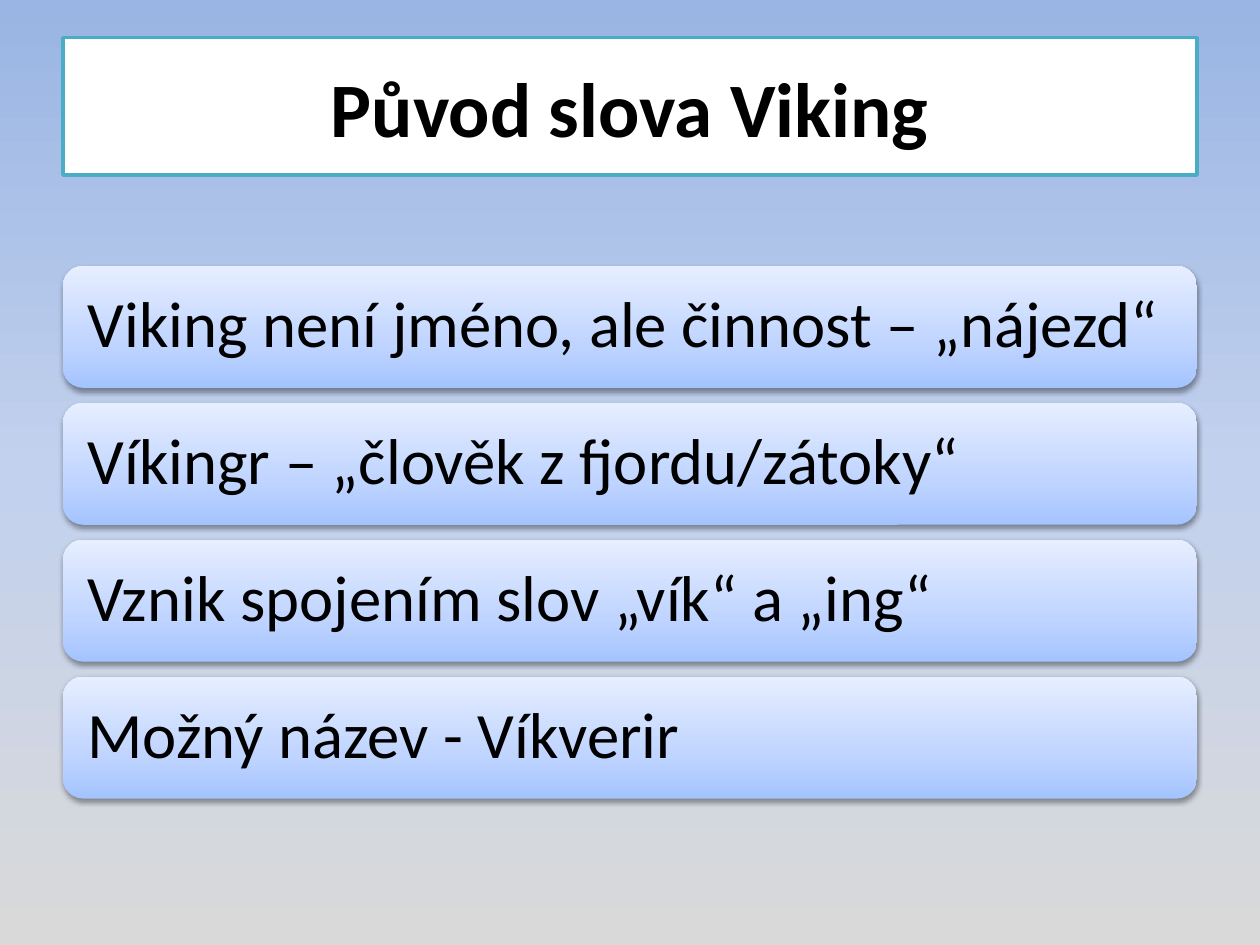
from lxml.etree import SubElement
from pptx import Presentation
from pptx.dml.color import RGBColor
from pptx.enum.shapes import MSO_SHAPE as Shape
from pptx.enum.text import MSO_ANCHOR as Anchor, PP_ALIGN as Align
from pptx.oxml.ns import qn
from pptx.util import Cm, Pt

BLACK = RGBColor(0x00, 0x00, 0x00)
WHITE = RGBColor(0xFF, 0xFF, 0xFF)
TEAL = RGBColor(0x4B, 0xAC, 0xC6)
SKY_STOPS = [
    (0, RGBColor(0x9A, 0xB5, 0xE4)),
    (50, RGBColor(0xC2, 0xD1, 0xED)),
    (100, RGBColor(0xD9, 0xD9, 0xD9)),
]
BAR_STOPS = [
    (0, RGBColor(0xA4, 0xC4, 0xFF)),
    (35, RGBColor(0xBF, 0xD4, 0xFF)),
    (100, RGBColor(0xE6, 0xEE, 0xFF)),
]

TITLE = "Původ slova Viking"
STATEMENTS = [
    "Viking není jméno, ale činnost – „nájezd“",
    "Víkingr – „člověk z fjordu/zátoky“",
    "Vznik spojením slov „vík“ a „ing“",
    "Možný název - Víkverir",
]


def add_color(parent, color, alpha=None):
    srgb = SubElement(parent, qn("a:srgbClr"), val=str(color))
    if alpha is not None:
        SubElement(srgb, qn("a:alpha"), val=str(alpha * 1000))


def fill_gradient(fill, properties, stops, angle):
    """Fill with any number of stops; the angle runs counter-clockwise."""
    fill.gradient()
    fill.gradient_angle = angle
    stop_list = properties.find(qn("a:gradFill")).find(qn("a:gsLst"))
    for old_stop in list(stop_list):
        stop_list.remove(old_stop)
    for position, color in stops:
        stop = SubElement(stop_list, qn("a:gs"), pos=str(position * 1000))
        add_color(stop, color)


def add_soft_shadow(bar):
    bar.shadow.inherit = False
    effects = bar._element.spPr.find(qn("a:effectLst"))
    shadow = SubElement(
        effects, qn("a:outerShdw"), blurRad=str(Pt(3.1)), dist=str(Pt(1.6)),
        dir="5400000", rotWithShape="0")
    add_color(shadow, BLACK, alpha=38)


def write_text(frame, text, size, bold=False, align=Align.LEFT,
               inset=None, line_spacing=None):
    frame.word_wrap = True
    frame.vertical_anchor = Anchor.MIDDLE
    if inset is not None:
        frame.margin_left = frame.margin_right = inset
        frame.margin_top = frame.margin_bottom = inset
    paragraph = frame.paragraphs[0]
    paragraph.alignment = align
    paragraph.line_spacing = line_spacing
    run = paragraph.add_run()
    run.text = text
    run.font.name = "Calibri"
    run.font.size = Pt(size)
    run.font.bold = bold
    run.font.color.rgb = BLACK


def place_title(slide, left, top, width, height):
    title = slide.shapes.title
    title.left, title.top, title.width, title.height = left, top, width, height
    title.fill.solid()
    title.fill.fore_color.rgb = WHITE
    title.line.color.rgb = TEAL
    title.line.width = Pt(2)
    write_text(title.text_frame, TITLE, 44, bold=True, align=Align.CENTER)


def add_statements(slide, left, top, width, height, gap=Cm(0.3)):
    """Stack equal bars, one for each statement, to fill the given box."""
    count = len(STATEMENTS)
    bar_height = (height - gap * (count - 1)) // count
    for row, statement in enumerate(STATEMENTS):
        bar = slide.shapes.add_shape(
            Shape.ROUNDED_RECTANGLE, left, top + row * (bar_height + gap),
            width, bar_height)
        fill_gradient(bar.fill, bar._element.spPr, BAR_STOPS, 90)
        bar.line.fill.background()
        add_soft_shadow(bar)
        write_text(bar.text_frame, statement, 37, inset=Cm(0.38),
                   line_spacing=0.9)


def main():
    deck = Presentation()
    deck.slide_width, deck.slide_height = Cm(25.4), Cm(19.05)
    slide = deck.slides.add_slide(deck.slide_layouts[5])
    background = slide.background.fill
    fill_gradient(background, slide._element.cSld.bg.bgPr, SKY_STOPS, 270)

    margin = Cm(1.27)
    content_width = deck.slide_width - 2 * margin
    place_title(slide, margin, Cm(0.76), content_width, Cm(2.77))
    add_statements(slide, margin, Cm(5.36), content_width, Cm(10.74))
    deck.save("out.pptx")


if __name__ == "__main__":
    main()
